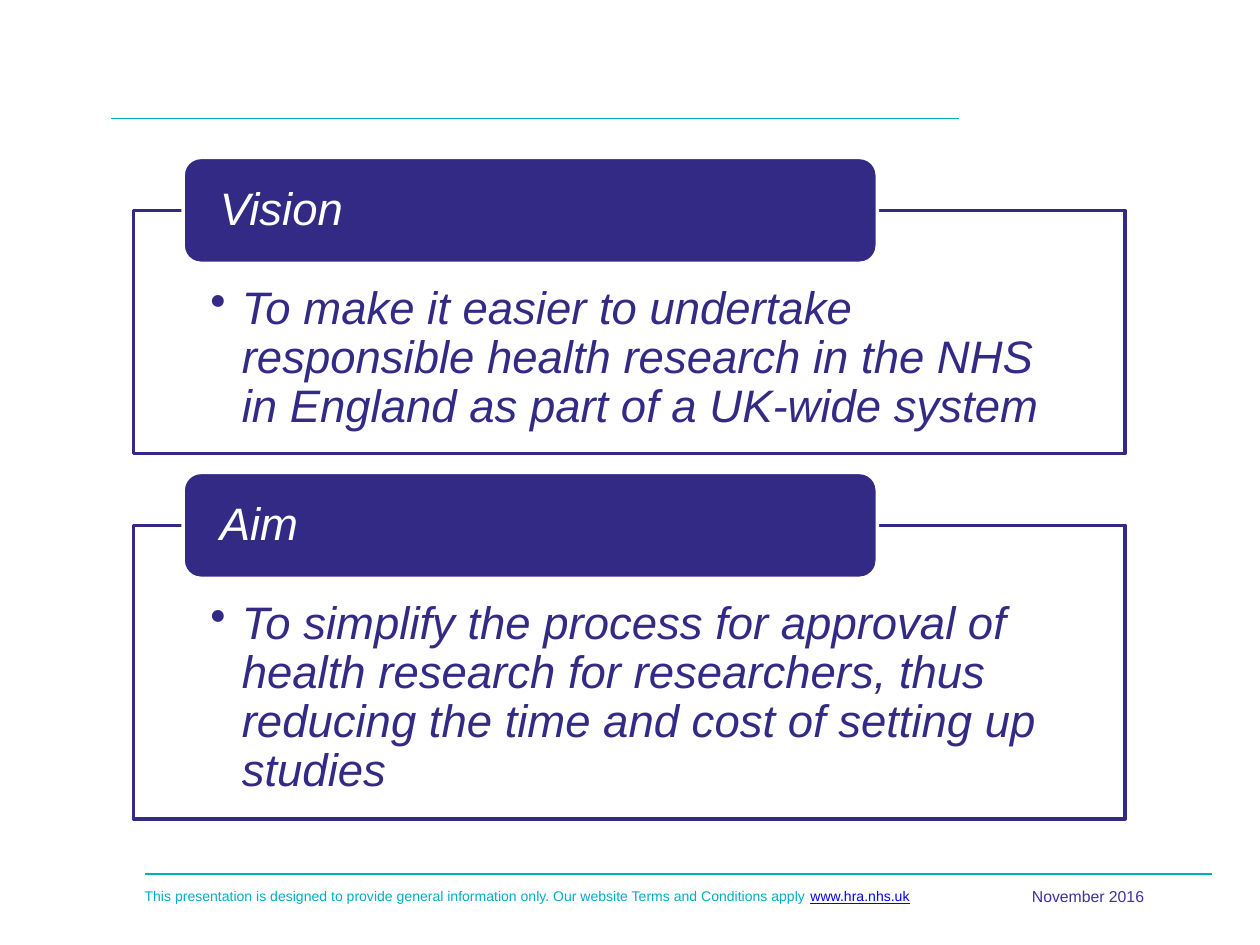
import pptx
import pptx.util
import pptx.dml.color
import pptx.enum.shapes
import pptx.enum.text
import pptx.oxml.ns
from lxml import etree

COLOURS = {"teal": "00ADC6", "navy": "332A86", "violet": "3C32A0",
           "white": "FFFFFF", "link": "0000FF"}
WIDTH, HEIGHT = 10, 7.5
SHAPES = pptx.enum.shapes.MSO_SHAPE
ANCHORS = pptx.enum.text.MSO_ANCHOR
ALIGNS = pptx.enum.text.PP_ALIGN


def inches(*values):
    return [pptx.util.Inches(value) for value in values]


def colour(name):
    return pptx.dml.color.RGBColor.from_string(COLOURS[name])


def add_element(parent, tag, **attributes):
    return etree.SubElement(parent, pptx.oxml.ns.qn(tag), attributes)


def write_text(frame, *spans, size, insets=(0.1, 0.05, 0.1, 0.05), anchor=ANCHORS.TOP,
               align=ALIGNS.LEFT, italic=False, spacing=1.0, bullet=False):
    """Write one paragraph; each span is (text, colour name, underlined)."""
    frame.word_wrap = True
    frame.vertical_anchor = anchor
    (frame.margin_left, frame.margin_top,
     frame.margin_right, frame.margin_bottom) = inches(*insets)
    para = frame.paragraphs[0]
    para.alignment = align
    para.line_spacing = spacing
    if bullet:
        properties = para._p.get_or_add_pPr()
        indent = pptx.util.Inches(0.25)
        properties.set("marL", str(indent))
        properties.set("indent", str(-indent))
        add_element(properties, "a:buChar", char="•")
    for text, name, underlined in spans:
        span = para.add_run()
        span.text = text
        span.font.name = "Arial"
        span.font.size = pptx.util.Pt(size)
        span.font.italic = italic
        span.font.underline = underlined
        span.font.color.rgb = colour(name)


def add_rule(page, left, right, top):
    rule = page.shapes.add_connector(pptx.enum.shapes.MSO_CONNECTOR.STRAIGHT,
                                     *inches(left, top, right, top))
    rule.line.color.rgb = colour("teal")
    rule.line.width = pptx.util.Pt(1)
    add_element(rule._element.spPr, "a:effectLst")


def add_panel(page, kind, box, fill, line):
    panel = page.shapes.add_shape(kind, *inches(*box))
    panel.shadow.inherit = False
    panel.fill.solid()
    panel.fill.fore_color.rgb = colour(fill)
    panel.line.color.rgb = colour(line)
    panel.line.width = pptx.util.Pt(2)
    return panel


def add_section(page, box, heading, body):
    """Outlined panel with a heading pill centred on its top edge."""
    left, top, width, height = box
    # Body panel, slightly transparent
    panel = add_panel(page, SHAPES.RECTANGLE, box, "white", "navy")
    fill = panel._element.spPr.find(pptx.oxml.ns.qn("a:solidFill"))
    add_element(fill[0], "a:alpha", val="90000")
    write_text(panel.text_frame, (body, "navy", False), size=26, italic=True,
               insets=(0.61, 0.59, 0.61, 0.2), spacing=0.9, bullet=True)
    # Heading pill
    pill_height = 0.84
    pill_box = (left + width * 0.05, top - pill_height / 2, width * 0.7, pill_height)
    pill = add_panel(page, SHAPES.ROUNDED_RECTANGLE, pill_box, "navy", "white")
    write_text(pill.text_frame, (heading, "white", False), size=26, italic=True,
               insets=(0.25, 0, 0.25, 0), anchor=ANCHORS.MIDDLE, spacing=0.9)


def add_footer(page, box):
    left, top, width, height = box
    add_rule(page, left + 0.1, left + width, top)
    notice = page.shapes.add_textbox(*inches(left, top + 0.06, width * 0.74, 0.24))
    write_text(notice.text_frame,
               ("This presentation is designed to provide general information only. "
                "Our website Terms and Conditions apply ", "teal", False),
               ("www.hra.nhs.uk", "link", True), size=8)
    date_width = 2.01
    date = page.shapes.add_textbox(
        *inches(left + width - date_width + 0.02, top + 0.05, date_width, height))
    write_text(date.text_frame, ("November 2016", "violet", False), size=9,
               align=ALIGNS.CENTER)


def main():
    deck = pptx.Presentation()
    deck.slide_width, deck.slide_height = inches(WIDTH, HEIGHT)
    page = deck.slides.add_slide(deck.slide_layouts[6])

    # Title rule and footer
    add_rule(page, WIDTH * 0.088, WIDTH * 0.761, HEIGHT * 0.1255)
    add_footer(page, (WIDTH * 0.105, HEIGHT * 0.925, WIDTH * 0.857, 0.4))

    # Vision and aim
    sections = [
        ("Vision", 1.93, "To make it easier to undertake responsible health research "
                         "in the NHS in England as part of a UK-wide system"),
        ("Aim", 2.33, "To simplify the process for approval of health research for "
                      "researchers, thus reducing the time and cost of setting up studies"),
    ]
    top, gap = 1.67, 0.57
    for heading, height, body in sections:
        add_section(page, (WIDTH * 0.106, top, WIDTH * 0.787, height), heading, body)
        top += height + gap

    deck.save("out.pptx")


if __name__ == "__main__":
    main()
